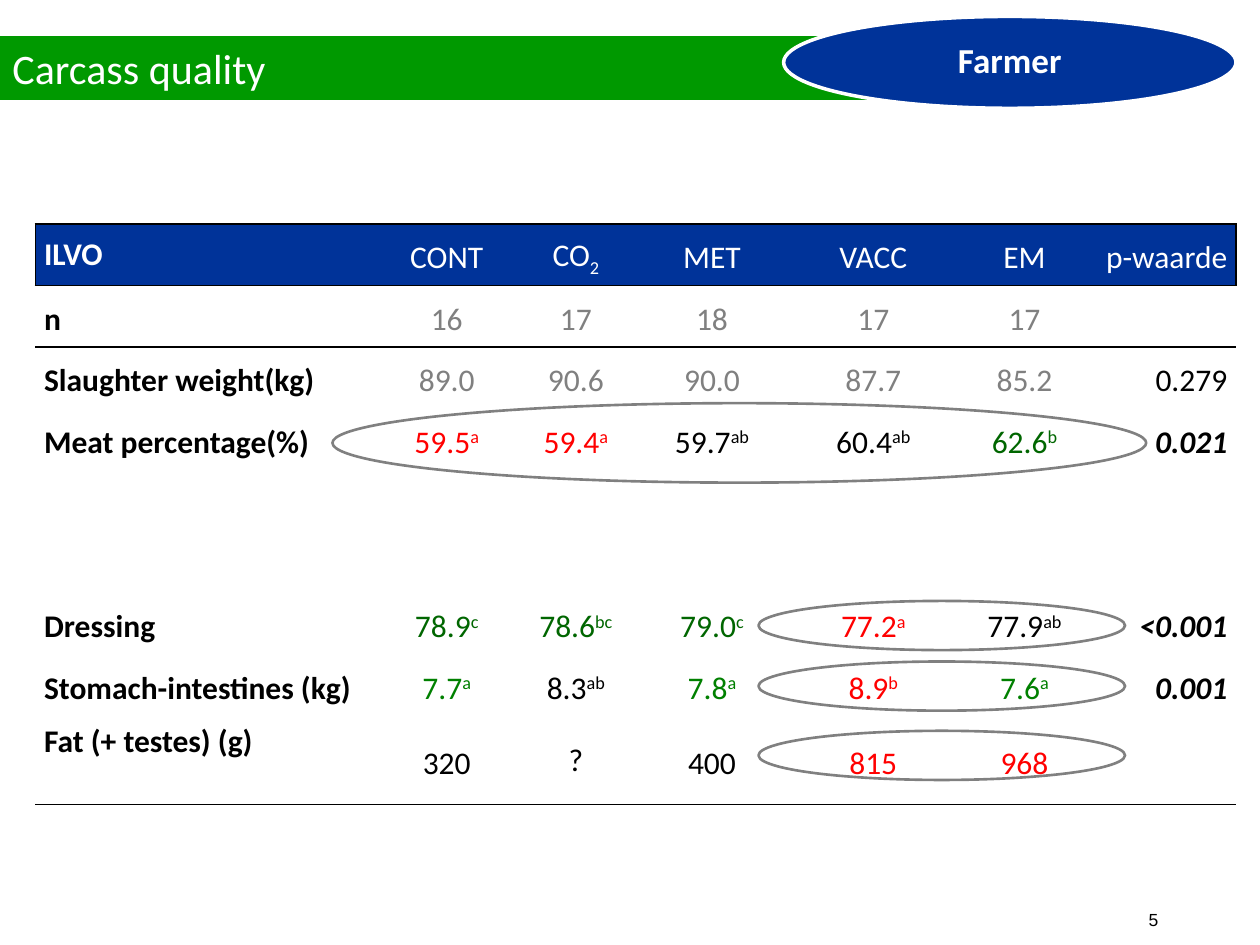
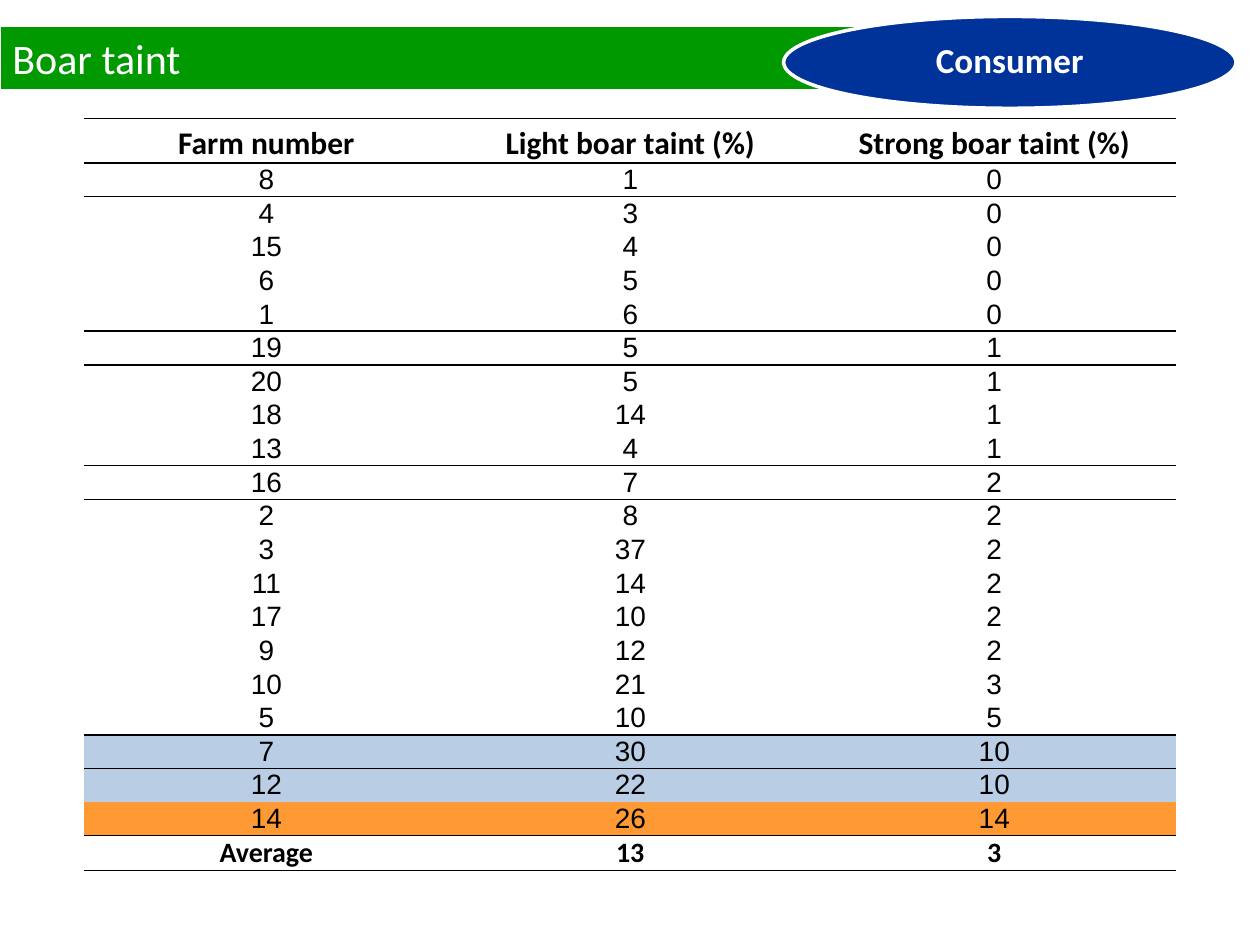
"""Builds two slides on boar farming: carcass quality and boar taint per farm."""
from pptx import Presentation
from pptx.dml.color import RGBColor
from pptx.enum.shapes import MSO_SHAPE
from pptx.enum.text import MSO_ANCHOR, PP_ALIGN
from pptx.oxml.ns import qn
from pptx.oxml.xmlchemy import OxmlElement
from pptx.util import Pt

COLOURS = {
    "black": "000000", "white": "FFFFFF", "grey": "808080", "red": "FF0000",
    "band": "009900", "navy": "003399", "dark": "006600", "green": "008000",
    "sky": "B9CDE5", "orange": "FF9933",
}
NO_STYLE = "{2D5ABB26-0587-4C30-8999-92F81FD0307C}"
BASELINES = {"^": "30000", "_": "-25000"}

CARCASS_HEADER = ["ILVO", "CONT", "CO_2", "MET", "VACC", "EM", "p-waarde"]
CARCASS_ROWS = [
    ("n", "16 17 18 17 17", "grey grey grey grey grey", ""),
    ("Slaughter weight(kg)", "89.0 90.6 90.0 87.7 85.2", "grey grey grey grey grey", "0.279"),
    ("Meat percentage(%)", "59.5^a 59.4^a 59.7^ab 60.4^ab 62.6^b", "red red black black dark", "0.021"),
    ("", "", "", ""),
    ("", "", "", ""),
    ("Dressing", "78.9^c 78.6^bc 79.0^c 77.2^a 77.9^ab", "dark dark dark red black", "<0.001"),
    ("Stomach-intestines (kg)", "7.7^a 8.3^ab 7.8^a 8.9^b 7.6^a", "green black green red green", "0.001"),
    ("Fat (+ testes) (g)", "320 ? 400 815 968", "black black black red red", ""),
]
CARCASS_WIDTHS = [193, 84.2, 63.4, 92.2, 92.2, 80.6, 80.6]
CARCASS_HEIGHTS = [35.2] * 8 + [50.3]
CARCASS_RULES = {0: 1, 1: 1, 9: 1}
HIGHLIGHTS = [
    (433.4, 417.6, 209.5, 28.1),
    (433.4, 378, 209.5, 28.1),
    (190, 230.4, 465, 45.4),
    (433.4, 343.4, 209.5, 28.1),
]

TAINT_HEADER = ("Farm number", "Light boar taint (%)", "Strong boar taint (%)")
TAINT_FARMS = [
    (8, 1, 0), (4, 3, 0), (15, 4, 0), (6, 5, 0), (1, 6, 0),
    (19, 5, 1), (20, 5, 1), (18, 14, 1), (13, 4, 1),
    (16, 7, 2), (2, 8, 2), (3, 37, 2), (11, 14, 2), (17, 10, 2), (9, 12, 2),
    (10, 21, 3), (5, 10, 5), (7, 30, 10), (12, 22, 10), (14, 26, 14),
]
TAINT_AVERAGE = ("Average", 13, 3)
TAINT_FILLS = {18: "sky", 19: "sky", 20: "orange"}
TAINT_HEIGHTS = [25.5] + [19.24] * 20 + [20]
TAINT_RULES = {0: 1, 1: 1, 6: 1, 10: 1, 18: 1, 21: 0.5, 22: 1}


def colour(name):
    return RGBColor.from_string(COLOURS[name])


def apply_format(target, values):
    for name, value in values.items():
        setattr(target, name, value)


def write(paragraph, text, size, ink, font="Calibri", bold=False, italic=False,
          align=PP_ALIGN.LEFT, spacing=None):
    apply_format(paragraph, {"alignment": align, "line_spacing": spacing})
    mark = next((mark for mark in BASELINES if mark in text), None)
    for index, part in enumerate(text.split(mark) if mark else [text]):
        run = paragraph.add_run()
        run.text = part
        apply_format(run.font, {"size": Pt(size), "name": font, "bold": bold, "italic": italic})
        run.font.color.rgb = colour(ink)
        if index:
            run.font._element.set("baseline", BASELINES[mark])


def add_outline(slide, kind, box, fill, line, width):
    shape = slide.shapes.add_shape(kind, *map(Pt, box))
    shape.shadow.inherit = False
    if fill:
        shape.fill.solid()
        shape.fill.fore_color.rgb = colour(fill)
    else:
        shape.fill.background()
    shape.line.color.rgb = colour(line)
    shape.line.width = Pt(width)
    return shape


def add_heading(slide, title, audience, top, line):
    band = add_outline(slide, MSO_SHAPE.RECTANGLE, (0, top, 572.4, 36), "band", line, 0.75)
    band.text_frame.vertical_anchor = MSO_ANCHOR.TOP
    write(band.text_frame.paragraphs[0], title, 24, "white")
    badge = add_outline(slide, MSO_SHAPE.OVAL, (447.8, 9.4, 258.5, 52.5), "navy", "white", 2)
    badge.text_frame.vertical_anchor = MSO_ANCHOR.MIDDLE
    write(badge.text_frame.paragraphs[0], audience, 20, "white", bold=True,
          align=PP_ALIGN.CENTER, spacing=0.9)


def add_border(cell, side, width):
    properties = cell._tc.get_or_add_tcPr()
    line = OxmlElement(f"a:ln{side}")
    line.set("w", str(Pt(width)))
    fill = OxmlElement("a:solidFill")
    ink = OxmlElement("a:srgbClr")
    ink.set("val", COLOURS["black"])
    fill.append(ink)
    line.append(fill)
    properties.append(line)


def add_grid(slide, left, top, widths, heights, rules, fills, side_margin, boxed_rows=()):
    frame = slide.shapes.add_table(len(heights), len(widths), Pt(left), Pt(top),
                                   Pt(sum(widths)), Pt(sum(heights)))
    frame._element.find(".//" + qn("a:tableStyleId")).text = NO_STYLE
    table = frame.table
    apply_format(table, {"first_row": False, "horz_banding": False})
    for column, width in zip(table.columns, widths):
        column.width = Pt(width)
    for row_index, (row, height) in enumerate(zip(table.rows, heights)):
        row.height = Pt(height)
        for column_index, cell in enumerate(row.cells):
            apply_format(cell, {"margin_left": Pt(side_margin), "margin_right": Pt(side_margin),
                                "margin_top": 0, "margin_bottom": 0,
                                "vertical_anchor": MSO_ANCHOR.MIDDLE})
            if row_index in boxed_rows and column_index == 0:
                add_border(cell, "L", 1)
            if row_index in boxed_rows and column_index == len(widths) - 1:
                add_border(cell, "R", 1)
            for side, edge in (("T", row_index), ("B", row_index + 1)):
                if edge in rules:
                    add_border(cell, side, rules[edge])
            if row_index in fills:
                cell.fill.solid()
                cell.fill.fore_color.rgb = colour(fills[row_index])
            else:
                cell.fill.background()
    return table


def build_carcass_slide(slide):
    table = add_grid(slide, 20.2, 128, CARCASS_WIDTHS, CARCASS_HEIGHTS, CARCASS_RULES,
                     {0: "navy"}, 5, boxed_rows=(0,))
    alignments = [PP_ALIGN.LEFT] + [PP_ALIGN.CENTER] * 5 + [PP_ALIGN.RIGHT]
    rows = [(CARCASS_HEADER, ["white"] * 7)]
    for label, values, inks, p_value in CARCASS_ROWS:
        if label:
            rows.append(([label, *values.split(), p_value], ["black", *inks.split(), "black"]))
        else:
            rows.append(([], []))
    for row_index, (texts, inks) in enumerate(rows):
        for column, (text, ink) in enumerate(zip(texts, inks)):
            if not text:
                continue
            significant = column == 6 and row_index > 2
            plain_spacing = text in ("ILVO", "?")
            write(table.cell(row_index, column).text_frame.paragraphs[0], text, 18, ink,
                  bold=column == 0 or significant, italic=significant,
                  align=alignments[column], spacing=None if plain_spacing else 1.15)
    table.cell(len(rows) - 1, 0).vertical_anchor = MSO_ANCHOR.TOP
    number = slide.shapes.add_textbox(Pt(609.1), Pt(516.2), Pt(59.8), Pt(23.8))
    number.text_frame.word_wrap = True
    write(number.text_frame.paragraphs[0], "5", 10, "black", font="Arial", align=PP_ALIGN.RIGHT)
    for box in HIGHLIGHTS:
        add_outline(slide, MSO_SHAPE.OVAL, box, None, "grey", 1.5)
    add_heading(slide, "Carcass quality", "Farmer", 20.9, "band")


def build_taint_slide(slide):
    add_heading(slide, "Boar taint", "Consumer", 15.1, "white")
    table = add_grid(slide, 48.2, 67.7, [208] * 3, TAINT_HEIGHTS, TAINT_RULES, TAINT_FILLS, 0)
    rows = [TAINT_HEADER, *TAINT_FARMS, TAINT_AVERAGE]
    last = len(rows) - 1
    anchors = {0: MSO_ANCHOR.BOTTOM, last: MSO_ANCHOR.TOP}
    for row_index, values in enumerate(rows):
        emphasised = row_index in anchors
        for column, value in enumerate(values):
            cell = table.cell(row_index, column)
            cell.vertical_anchor = anchors.get(row_index, MSO_ANCHOR.MIDDLE)
            write(cell.text_frame.paragraphs[0], str(value), 16 if row_index else 18, "black",
                  font="Calibri" if emphasised else "Arial", bold=emphasised,
                  align=PP_ALIGN.CENTER)


def main():
    presentation = Presentation()
    apply_format(presentation, {"slide_width": Pt(720), "slide_height": Pt(540)})
    for build in (build_carcass_slide, build_taint_slide):
        build(presentation.slides.add_slide(presentation.slide_layouts[6]))
    presentation.save("out.pptx")


if __name__ == "__main__":
    main()
